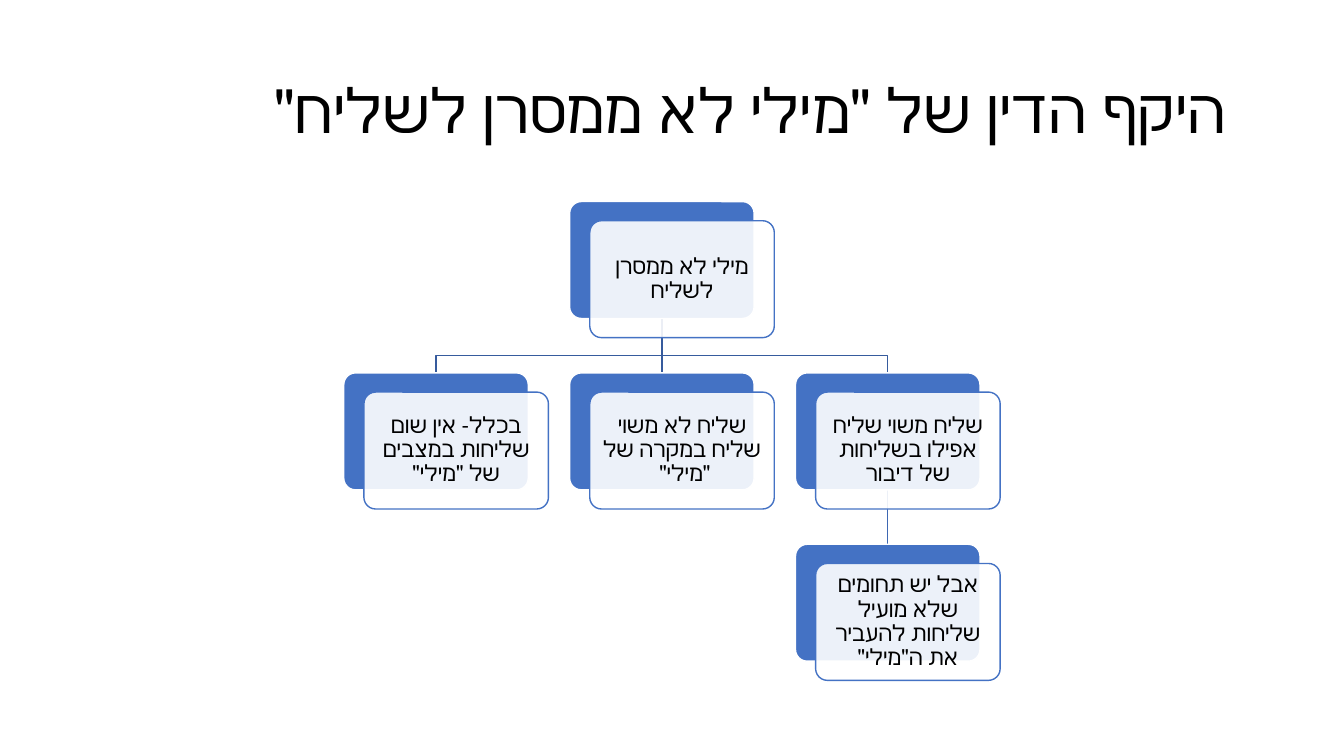
from lxml.etree import SubElement
from pptx import Presentation
from pptx.dml.color import RGBColor
from pptx.enum.lang import MSO_LANGUAGE_ID
from pptx.enum.shapes import MSO_CONNECTOR, MSO_SHAPE
from pptx.enum.text import MSO_ANCHOR, MSO_AUTO_SIZE, PP_ALIGN
from pptx.oxml.ns import qn
from pptx.util import Inches, Pt

COLORS = {"text": "000000", "white": "FFFFFF", "accent": "4472C4",
          "branch": "365B9D", "twig": "3E67B2"}
CARD_WIDTH, CARD_HEIGHT = 1.83, 1.16
COLUMN_STEP, ROW_STEP = 2.24, 1.7
FIRST_LEFT, FIRST_TOP = 3.41, 2
FRONT_SHIFT_X, FRONT_SHIFT_Y = 0.2, 0.19
BRANCH_Y = 3.53
TOP_SIDE, BOTTOM_SIDE = 0, 2


def color(name):
    return RGBColor.from_string(COLORS[name])


def write(frame, text, size, align, after=0, margin=None):
    frame.word_wrap = True
    frame.auto_size = MSO_AUTO_SIZE.NONE
    frame.vertical_anchor = MSO_ANCHOR.MIDDLE
    if margin is not None:
        frame.margin_left = frame.margin_right = Inches(margin)
        frame.margin_top = frame.margin_bottom = Inches(margin)
    paragraph = frame.paragraphs[0]
    paragraph.alignment = align
    paragraph.line_spacing = 0.9
    paragraph.space_before = Pt(0)
    paragraph.space_after = Pt(after)
    paragraph._p.get_or_add_pPr().set("rtl", "1")
    run = paragraph.add_run()
    run.text = text
    run.font.size = Pt(size)
    run.font.name = "Calibri"
    run.font.color.rgb = color("text")
    run.font.language_id = MSO_LANGUAGE_ID.HEBREW


def card_position(column, row):
    return FIRST_LEFT + column * COLUMN_STEP, FIRST_TOP + row * ROW_STEP


def card_middle(column):
    return card_position(column, 0)[0] + CARD_WIDTH / 2


class HierarchySlide:
    def __init__(self, deck):
        self.slide = deck.slides.add_slide(deck.slide_layouts[5])
        self.shapes = self.slide.shapes

    def title(self, text):
        heading = self.shapes.title
        heading.left, heading.top = Inches(0.92), Inches(0.4)
        heading.width, heading.height = Inches(11.5), Inches(1.45)
        write(heading.text_frame, text, size=44, align=PP_ALIGN.RIGHT)

    def stem(self, column, row, line):
        x, top = Inches(card_middle(column)), card_position(column, row)[1]
        stem = self.shapes.add_connector(
            MSO_CONNECTOR.STRAIGHT, x, Inches(top + CARD_HEIGHT), x, Inches(top + ROW_STEP))
        stem.line.color.rgb = color(line)
        stem.line.width = Pt(1)
        SubElement(stem._element.spPr, qn("a:effectLst"))
        return stem

    def branch(self, parent_column, child_column):
        start_x, end_x = card_middle(parent_column), card_middle(child_column)
        start_y, end_y = FIRST_TOP + CARD_HEIGHT, FIRST_TOP + ROW_STEP
        outline = self.shapes.build_freeform(Inches(start_x), Inches(start_y))
        bends = [(start_x, BRANCH_Y), (end_x, BRANCH_Y), (end_x, end_y)]
        outline.add_line_segments([(Inches(x), Inches(y)) for x, y in bends], close=False)
        branch = outline.convert_to_shape()
        branch.shadow.inherit = False
        branch.fill.background()
        branch.line.color.rgb = color("branch")
        branch.line.width = Pt(1)

    def panel(self, left, top, fill, line, opacity=100):
        panel = self.shapes.add_shape(
            MSO_SHAPE.ROUNDED_RECTANGLE, Inches(left), Inches(top),
            Inches(CARD_WIDTH), Inches(CARD_HEIGHT))
        panel.adjustments[0] = 0.1
        panel.shadow.inherit = False
        panel.fill.solid()
        panel.fill.fore_color.rgb = color(fill)
        panel.line.color.rgb = color(line)
        panel.line.width = Pt(1)
        if opacity < 100:
            tint = panel._element.spPr.find(qn("a:solidFill"))[0]
            SubElement(tint, qn("a:alpha")).set("val", str(opacity * 1000))
        return panel

    def card(self, text, column, row):
        left, top = card_position(column, row)
        back = self.panel(left, top, fill="accent", line="white")
        front = self.panel(left + FRONT_SHIFT_X, top + FRONT_SHIFT_Y,
                           fill="white", line="accent", opacity=90)
        write(front.text_frame, text, size=16, align=PP_ALIGN.CENTER, after=5.6, margin=0.07)
        return back


def main():
    deck = Presentation()
    deck.slide_width, deck.slide_height = Inches(13.33), Inches(7.5)
    page = HierarchySlide(deck)
    page.title(' היקף הדין של "מילי לא ממסרן לשליח" ')

    exception_stem = page.stem(2, 1, "twig")
    page.branch(1, 2)
    middle_stem = page.stem(1, 0, "branch")
    page.branch(1, 0)

    principle = page.card("מילי לא ממסרן לשליח", 1, 0)
    page.card('בכלל- אין שום שליחות במצבים של "מילי"', 0, 1)
    no_second_agent = page.card('שליח לא משוי שליח במקרה של "מילי" ', 1, 1)
    second_agent = page.card("שליח משוי שליח אפילו בשליחות של דיבור", 2, 1)
    exception = page.card('אבל יש תחומים שלא מועיל שליחות להעביר את ה"מילי"', 2, 2)

    for stem, parent, child in [(middle_stem, principle, no_second_agent),
                                (exception_stem, second_agent, exception)]:
        stem.begin_connect(parent, BOTTOM_SIDE)
        stem.end_connect(child, TOP_SIDE)

    deck.save("out.pptx")


if __name__ == "__main__":
    main()
